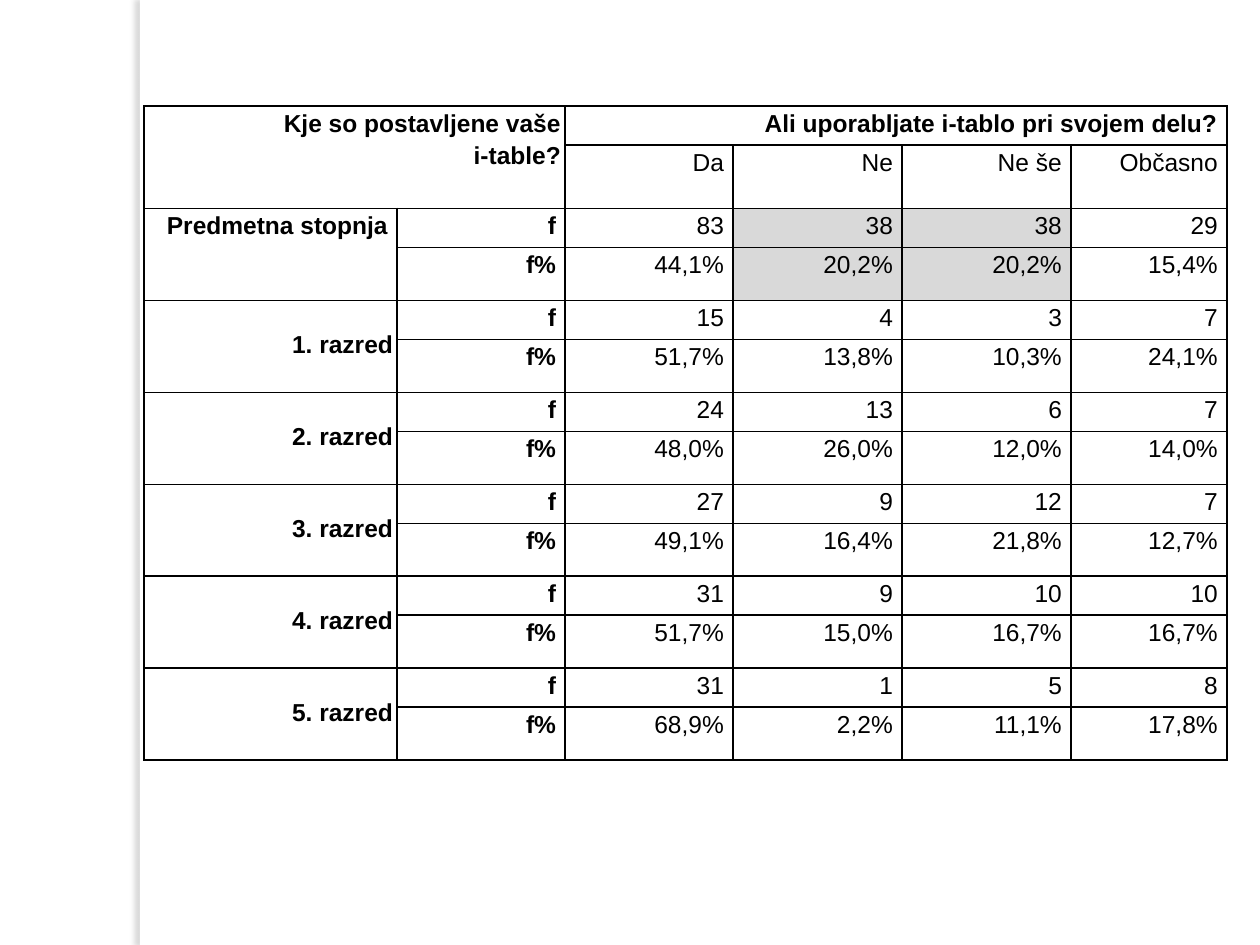
from lxml.etree import SubElement
from pptx import Presentation
from pptx.dml.color import RGBColor
from pptx.enum.shapes import MSO_SHAPE as Shape
from pptx.enum.text import MSO_ANCHOR as Anchor, PP_ALIGN as Align
from pptx.oxml.ns import qn
from pptx.util import Emu, Pt

PX = 914400 / 126
COLORS = {"white": "FFFFFF", "black": "000000", "gray": "D9D9D9", "shadow": "6E6E6E"}

COLUMNS = [253, 168, 168, 169, 169, 156]
ROWS = [39, 39] + [39, 53] * 6
ANSWERS = ["Da", "Ne", "Ne še", "Občasno"]
GROUPS = [
    ("Predmetna stopnja", ["83", "38", "38", "29"], ["44,1%", "20,2%", "20,2%", "15,4%"]),
    ("1. razred", ["15", "4", "3", "7"], ["51,7%", "13,8%", "10,3%", "24,1%"]),
    ("2. razred", ["24", "13", "6", "7"], ["48,0%", "26,0%", "12,0%", "14,0%"]),
    ("3. razred", ["27", "9", "12", "7"], ["49,1%", "16,4%", "21,8%", "12,7%"]),
    ("4. razred", ["31", "9", "10", "10"], ["51,7%", "15,0%", "16,7%", "16,7%"]),
    ("5. razred", ["31", "1", "5", "8"], ["68,9%", "2,2%", "11,1%", "17,8%"]),
]


def px(length):
    return Emu(round(length * PX))


class SlideBuilder:
    font = "Arial"
    size = Pt(14)
    line_spacing = 1.15
    inset = 4
    indent = 5

    def __init__(self, slide):
        self.slide = slide

    def strip(self, left, top, width, height):
        """White bar with a soft shadow on its left."""
        shape = self.slide.shapes.add_shape(
            Shape.RECTANGLE, px(left), px(top), px(width), px(height))
        shape.shadow.inherit = False
        shape.fill.solid()
        shape.fill.fore_color.rgb = RGBColor.from_string(COLORS["white"])
        shape.line.fill.background()
        effects = shape._element.spPr.find(qn("a:effectLst"))
        shadow = SubElement(effects, qn("a:outerShdw"), blurRad=str(Pt(3)),
                            dist=str(Pt(3)), dir="10800000", rotWithShape="0")
        color = SubElement(shadow, qn("a:srgbClr"), val=COLORS["shadow"])
        SubElement(color, qn("a:alpha"), val="25000")

    def table(self, left, top, columns, rows):
        frame = self.slide.shapes.add_table(
            len(rows), len(columns), px(left), px(top), px(sum(columns)), px(sum(rows)))
        table = frame.table
        table.first_row = table.horz_banding = False
        for column, width in zip(table.columns, columns):
            column.width = px(width)
        for row, height in zip(table.rows, rows):
            row.height = px(height)
        for cell in table.iter_cells():
            self.frame_cell(cell)
        return table

    def frame_cell(self, cell):
        cell.margin_left = cell.margin_right = px(self.inset)
        cell.margin_top = cell.margin_bottom = 0
        properties = cell._tc.get_or_add_tcPr()
        for side in ("lnL", "lnR", "lnT", "lnB"):
            line = SubElement(properties, qn(f"a:{side}"), w=str(Pt(1)))
            fill = SubElement(line, qn("a:solidFill"))
            SubElement(fill, qn("a:srgbClr"), val=COLORS["black"])
        cell.fill.background()

    def cell_text(self, cell, text, bold=False, indented=True, fill=None):
        cell.text_frame.text = text
        for paragraph in cell.text_frame.paragraphs:
            paragraph.alignment = Align.RIGHT
            paragraph.line_spacing = self.line_spacing
            if indented:
                properties = paragraph._p.get_or_add_pPr()
                for margin in ("marL", "marR"):
                    properties.set(margin, str(px(self.indent)))
            for run in paragraph.runs:
                run.font.name = self.font
                run.font.size = self.size
                run.font.bold = bold
                run.font.color.rgb = RGBColor.from_string(COLORS["black"])
        if fill:
            cell.fill.solid()
            cell.fill.fore_color.rgb = RGBColor.from_string(COLORS[fill])


def main():
    presentation = Presentation()
    presentation.slide_width, presentation.slide_height = px(1260), px(945)
    builder = SlideBuilder(presentation.slides.add_slide(presentation.slide_layouts[6]))

    builder.strip(140, 0, 10, 945)
    table = builder.table(144, 106, COLUMNS, ROWS)

    # Header rows
    table.cell(0, 0).merge(table.cell(1, 1))
    table.cell(0, 2).merge(table.cell(0, 5))
    builder.cell_text(table.cell(0, 0), "Kje so postavljene vaše\ni-table?",
                      bold=True, indented=False)
    builder.cell_text(table.cell(0, 2), "Ali uporabljate i-tablo pri svojem delu?",
                      bold=True)
    for column, answer in enumerate(ANSWERS, 2):
        builder.cell_text(table.cell(1, column), answer)

    # One pair of rows per group: counts, then shares
    for index, (name, counts, shares) in enumerate(GROUPS):
        first = 2 + 2 * index
        label = table.cell(first, 0)
        label.merge(table.cell(first + 1, 0))
        builder.cell_text(label, name, bold=True, indented=index == 0)
        if index:
            label.vertical_anchor = Anchor.MIDDLE
            label.margin_bottom = px(6)
        for row, (measure, values) in enumerate([("f", counts), ("f%", shares)], first):
            builder.cell_text(table.cell(row, 1), measure, bold=True)
            for column, value in enumerate(values, 2):
                shaded = index == 0 and column in (3, 4)
                builder.cell_text(table.cell(row, column), value,
                                  fill="gray" if shaded else None)

    presentation.save("out.pptx")


if __name__ == "__main__":
    main()
